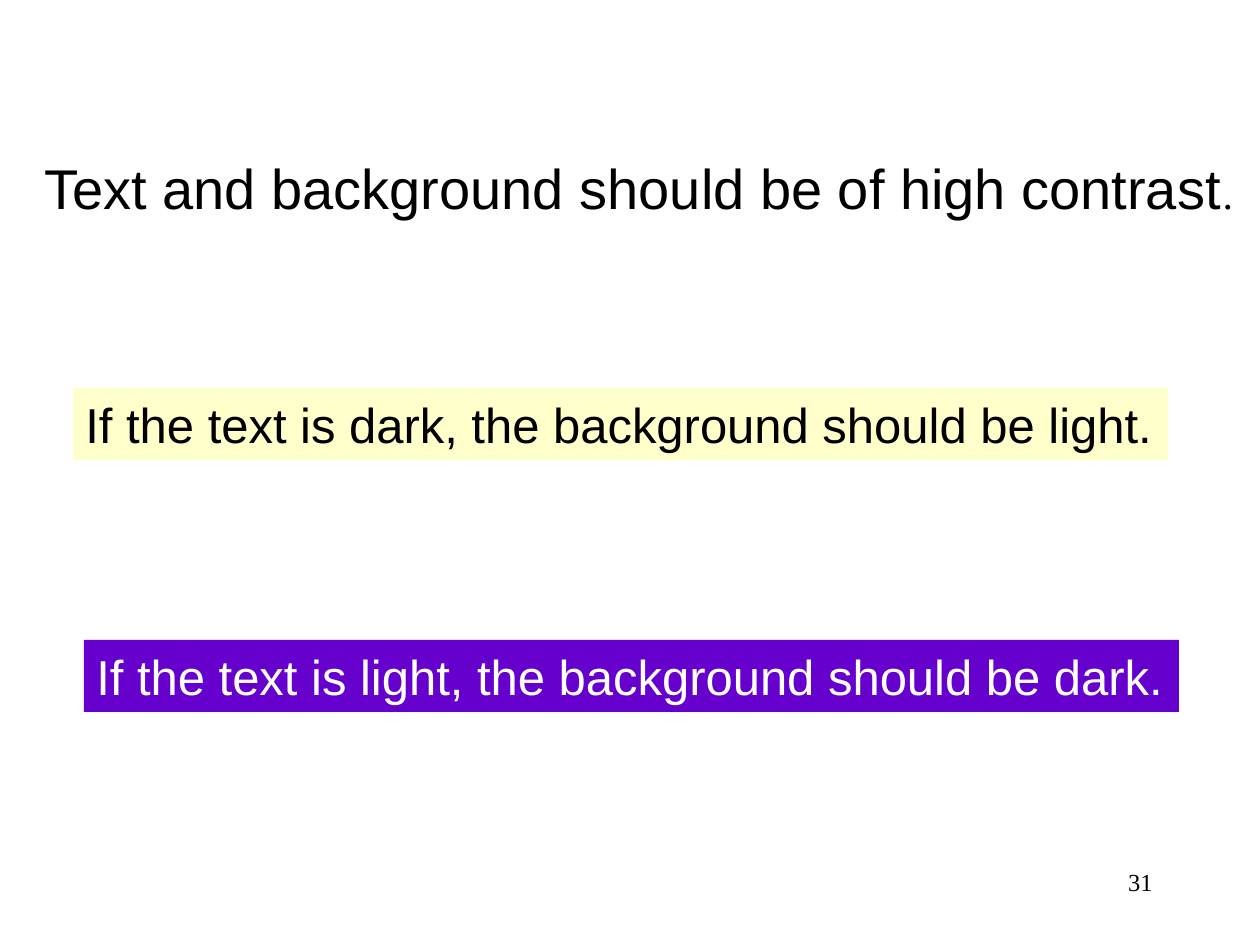
import pptx
import pptx.dml.color
import pptx.enum.shapes
import pptx.enum.text
import pptx.util
from dataclasses import dataclass

PX = pptx.util.Inches(1) // 126


@dataclass(frozen=True)
class Theme:
    sans: str = "Arial"
    serif: str = "Times New Roman"
    dark: str = "000000"
    light: str = "FFFFFF"
    cream: str = "FFFFCC"
    purple: str = "6600CC"
    title: int = 32
    stop: int = 24
    body: int = 28
    number: int = 14


THEME = Theme()
ALIGN = pptx.enum.text.PP_ALIGN


def rgb(value):
    return pptx.dml.color.RGBColor.from_string(value)


def px(*lengths):
    return [n * PX for n in lengths]


def write(sp, runs, color, align=ALIGN.LEFT, wrap=False):
    """Fill sp with one paragraph of (text, font, size) runs."""
    tf = sp.text_frame
    tf.word_wrap = wrap
    tf.vertical_anchor = pptx.enum.text.MSO_ANCHOR.TOP
    if not wrap:
        tf.auto_size = pptx.enum.text.MSO_AUTO_SIZE.SHAPE_TO_FIT_TEXT
    p = tf.paragraphs[0]
    p.alignment = align
    for text, font, size in runs:
        r = p.add_run()
        r.text = text
        r.font.name = font
        r.font.size = pptx.util.Pt(size)
        r.font.color.rgb = rgb(color)


def add_text(s, box, runs, **style):
    write(s.shapes.add_textbox(*px(*box)), runs, THEME.dark, **style)


def add_banner(s, box, text, fill, color):
    sp = s.shapes.add_shape(pptx.enum.shapes.MSO_SHAPE.RECTANGLE, *px(*box))
    sp.shadow.inherit = False
    sp.fill.solid()
    sp.fill.fore_color.rgb = rgb(fill)
    sp.line.fill.background()
    write(sp, [(text, THEME.sans, THEME.body)], color)


def main():
    prs = pptx.Presentation()
    prs.slide_width, prs.slide_height = px(1260, 945)
    s = prs.slides.add_slide(prs.slide_layouts[6])

    add_text(s, (32, 147, 1216, 80), [
        ("Text and background should be of high contrast", THEME.sans, THEME.title),
        (".", THEME.serif, THEME.stop),
    ])
    add_banner(s, (73, 388, 1095, 72),
               "If the text is dark, the background should be light.",
               THEME.cream, THEME.dark)
    add_banner(s, (84, 640, 1095, 72),
               "If the text is light, the background should be dark.",
               THEME.purple, THEME.light)
    add_text(s, (903, 861, 262, 63), [("31", THEME.serif, THEME.number)],
             align=ALIGN.RIGHT, wrap=True)

    prs.save("out.pptx")


if __name__ == "__main__":
    main()
